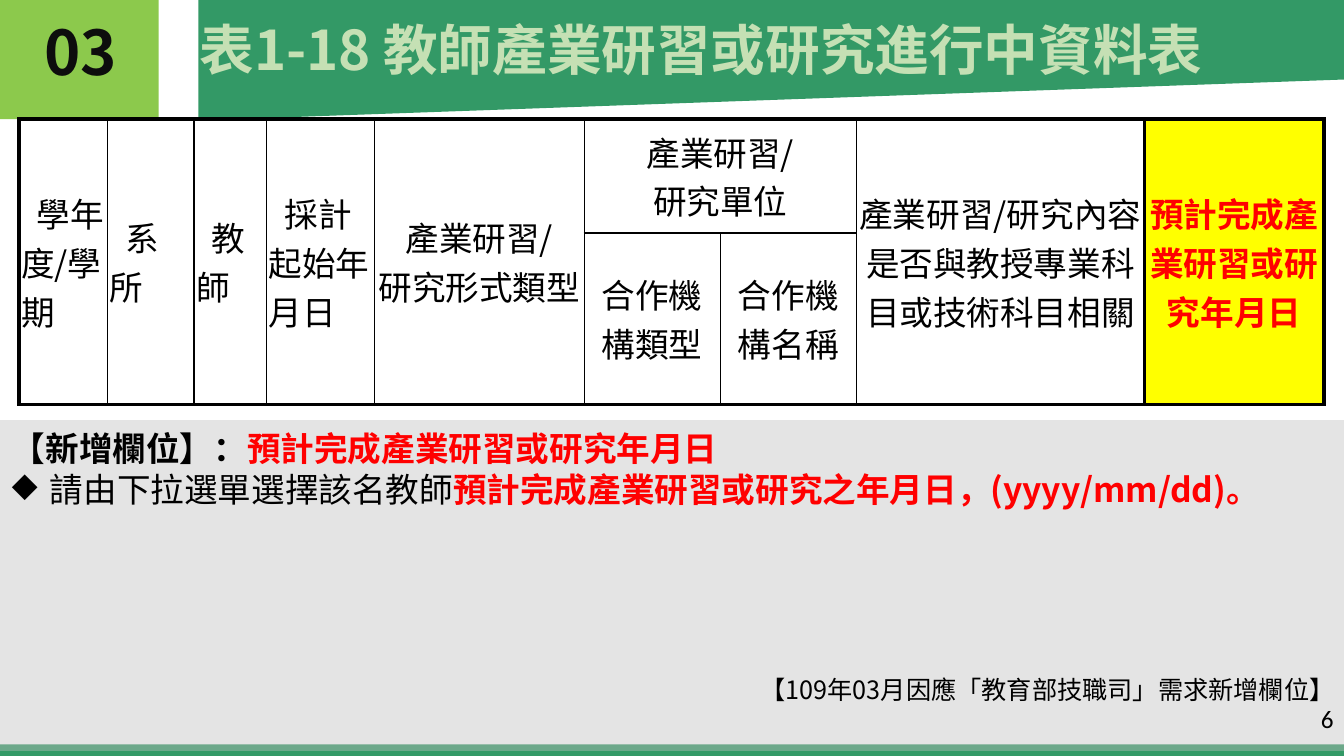
from lxml import etree
from pptx import Presentation, util as u
from pptx.dml.color import RGBColor
from pptx.enum import shapes, text
from pptx.oxml import parse_xml
from pptx.oxml.ns import nsdecls, qn

SANS = "Noto Sans CJK SC"
BLACK, RED, GREEN, YELLOW = "000000", "FF0000", "339966", "FFFF00"
LEFT, CENTER, RIGHT = text.PP_ALIGN.LEFT, text.PP_ALIGN.CENTER, text.PP_ALIGN.RIGHT


def style(p, size, color=BLACK, bold=False, align=LEFT, name=SANS):
    """Format a whole paragraph, East Asian letters included."""
    p.alignment = align
    f = p.font
    f.size, f.bold, f.name = u.Pt(size), bold, name
    f.color.rgb = RGBColor.from_string(color)
    etree.SubElement(f._element, qn("a:ea")).set("typeface", name)


def curve(p0, p1, p2, p3, steps=16):
    """Points along a cubic Bezier curve."""
    points = []
    for i in range(steps + 1):
        t = i / steps
        weights = ((1 - t) ** 3, 3 * t * (1 - t) ** 2, 3 * t * t * (1 - t), t ** 3)
        points.append(tuple(sum(w * q[k] for w, q in zip(weights, (p0, p1, p2, p3)))
                            for k in (0, 1)))
    return points


prs = Presentation()
prs.slide_width, prs.slide_height = u.Cm(33.87), u.Cm(19.05)
s = prs.slides.add_slide(prs.slide_layouts[5])

# Header band: number tab and title banner
tab = (curve((3.5, -0.05), (3.96, -0.05), (4.34, 0.56), (4.34, 1.3))
       + curve((4.34, 1.3), (4.34, 2.03), (3.96, 2.64), (3.5, 2.64))
       + [(3.4, 2.62), (0, 2.62), (0, -0.03), (3.4, -0.03)])
banner = (curve((5.54, 2.67), (5.05, 2.67), (4.65, 2.08), (4.65, 1.32))
          + curve((4.65, 1.32), (4.65, 0.58), (5.05, -0.03), (5.54, -0.03))
          + [(5.64, 0), (33.87, 0.05), (33.87, 2.41), (5.64, 2.67)])
for outline, color in ((tab, "8CC94C"), (banner, GREEN)):
    builder = s.shapes.build_freeform(*outline[0], scale=u.Cm(1))
    builder.add_line_segments(outline[1:])
    sp = builder.convert_to_shape()
    sp.shadow.inherit = False
    sp.fill.solid()
    sp.fill.fore_color.rgb = RGBColor.from_string(color)
    sp.line.fill.background()

# Footer strip and translucent note panel
for top, height, color, alpha in ((18.76, 0.3, GREEN, 100), (10.59, 8.33, "BFBFBF", 41)):
    sp = s.shapes.add_shape(shapes.MSO_SHAPE.RECTANGLE, 0, u.Cm(top),
                            prs.slide_width, u.Cm(height))
    sp.shadow.inherit = False
    sp.fill.solid()
    sp.fill.fore_color.rgb = RGBColor.from_string(color)
    sp.line.fill.background()
    if alpha < 100:
        srgb = sp.fill._xPr.find(".//" + qn("a:srgbClr"))
        etree.SubElement(srgb, qn("a:alpha")).set("val", str(alpha * 1000))

# Section number, heading and page number
title = s.shapes.title
title.element.getparent().append(title.element)
title.left, title.top, title.width, title.height = u.Cm(0.86), u.Cm(0.43), u.Cm(3.48), u.Cm(3.68)
heading = s.shapes.add_textbox(u.Cm(4.78), u.Cm(0.46), u.Cm(29.08), u.Cm(2.08))
page = s.shapes.add_textbox(u.Cm(26.24), u.Cm(17.6), u.Cm(7.62), u.Cm(1.02))
for sp, words, size, color in ((title, "03", 44, "0D0D0D"),
                               (heading, "表1-18 教師產業研習或研究進行中資料表", 39, "C5E0B4")):
    tf = sp.text_frame
    tf.word_wrap, tf.vertical_anchor = True, text.MSO_ANCHOR.TOP
    tf.text = words
    style(tf.paragraphs[0], size, color, True)
    tf.paragraphs[0].line_spacing = 0.9
tf = page.text_frame
tf.word_wrap, tf.vertical_anchor = True, text.MSO_ANCHOR.MIDDLE
tf.text = "6"
style(tf.paragraphs[0], 18, align=RIGHT, name="Calibri")

# Notes
notes = s.shapes.add_textbox(u.Cm(0.05), u.Cm(10.67), u.Cm(33.83), u.Cm(8.2))
tf = notes.text_frame
tf.word_wrap = True
lines = [
    (24, LEFT, 1, [("【新增欄位】：", BLACK, True), ("預計完成產業研習或研究年月日", RED, True)]),
    (24, LEFT, 0, [("請由下拉選單選擇該名教師", BLACK, False),
                   ("預計完成產業研習或研究之年月日，(yyyy/mm/dd)。", RED, True)]),
    (18, RIGHT, 118, [("【109年03月因應「教育部技職司」需求新增欄位】", BLACK, False)]),
]
for i, (size, align, before, runs) in enumerate(lines):
    p = tf.add_paragraph() if i else tf.paragraphs[0]
    style(p, size, align=align)
    p.line_spacing, p.space_before = u.Pt(size * 1.2), u.Pt(before)
    for words, color, bold in runs:
        r = p.add_run()
        r.text, r.font.bold = words, bold
        r.font.color.rgb = RGBColor.from_string(color)
pPr = tf.paragraphs[1]._p.get_or_add_pPr()
pPr.set("marL", str(u.Cm(0.96)))
pPr.set("indent", str(-u.Cm(0.96)))
pPr.find(qn("a:defRPr")).addprevious(parse_xml(f'<a:buChar {nsdecls("a")} char="◆"/>'))

# Table of columns
widths = [2.23, 2.18, 1.83, 2.72, 5.28, 3.43, 3.43, 7.26, 4.52]
heights = [2.87, 4.32]
last_row, last_col = len(heights) - 1, len(widths) - 1
tbl = s.shapes.add_table(len(heights), len(widths), u.Cm(0.48), u.Cm(3),
                         u.Cm(sum(widths)), u.Cm(sum(heights))).table
for col, width in zip(tbl.columns, widths):
    col.width = u.Cm(width)
for row, height in zip(tbl.rows, heights):
    row.height = u.Cm(height)
for c in range(len(widths)):
    if c not in (5, 6):
        tbl.cell(0, c).merge(tbl.cell(1, c))
tbl.cell(0, 5).merge(tbl.cell(0, 6))

labels = {
    (0, 0): "學年度/學期", (0, 1): "系所", (0, 2): "教師", (0, 3): "採計起始年月日",
    (0, 4): "產業研習/\n研究形式類型", (0, 5): "產業研習/\n研究單位",
    (0, 7): "產業研習/研究內容是否與教授專業科目或技術科目相關",
    (0, 8): "預計完成產業研習或研究年月日",
    (1, 5): "合作機構類型", (1, 6): "合作機構名稱",
}
for r in range(len(heights)):
    for c in range(len(widths)):
        cell = tbl.cell(r, c)
        split = c in (5, 6)
        thick = {"L": c in (0, last_col), "R": c >= last_col - 1,
                 "T": r == 0 or not split, "B": r == last_row or not split}
        tcPr = cell._tc.get_or_add_tcPr()
        for side, heavy in thick.items():
            tcPr.append(parse_xml(
                f'<a:ln{side} {nsdecls("a")} w="{u.Pt(3 if heavy else 1)}"><a:solidFill>'
                f'<a:srgbClr val="{BLACK}"/></a:solidFill></a:ln{side}>'))
        new_column = c == last_col
        if new_column:
            cell.fill.solid()
            cell.fill.fore_color.rgb = RGBColor.from_string(YELLOW)
        else:
            cell.fill.background()
        if (r, c) not in labels:
            continue
        cell.text = labels[r, c]
        cell.vertical_anchor = text.MSO_ANCHOR.MIDDLE
        cell.margin_left = cell.margin_right = u.Cm(0.05)
        cell.margin_top = cell.margin_bottom = 0
        upright = c < 4
        if upright:
            tcPr.set("vert", "eaVert")
        for p in cell.text_frame.paragraphs:
            style(p, 24, RED if new_column else BLACK, new_column, LEFT if upright else CENTER)
            if upright:
                p._p.get_or_add_pPr().set("indent", str(u.Cm(0.4)))

prs.save("out.pptx")
